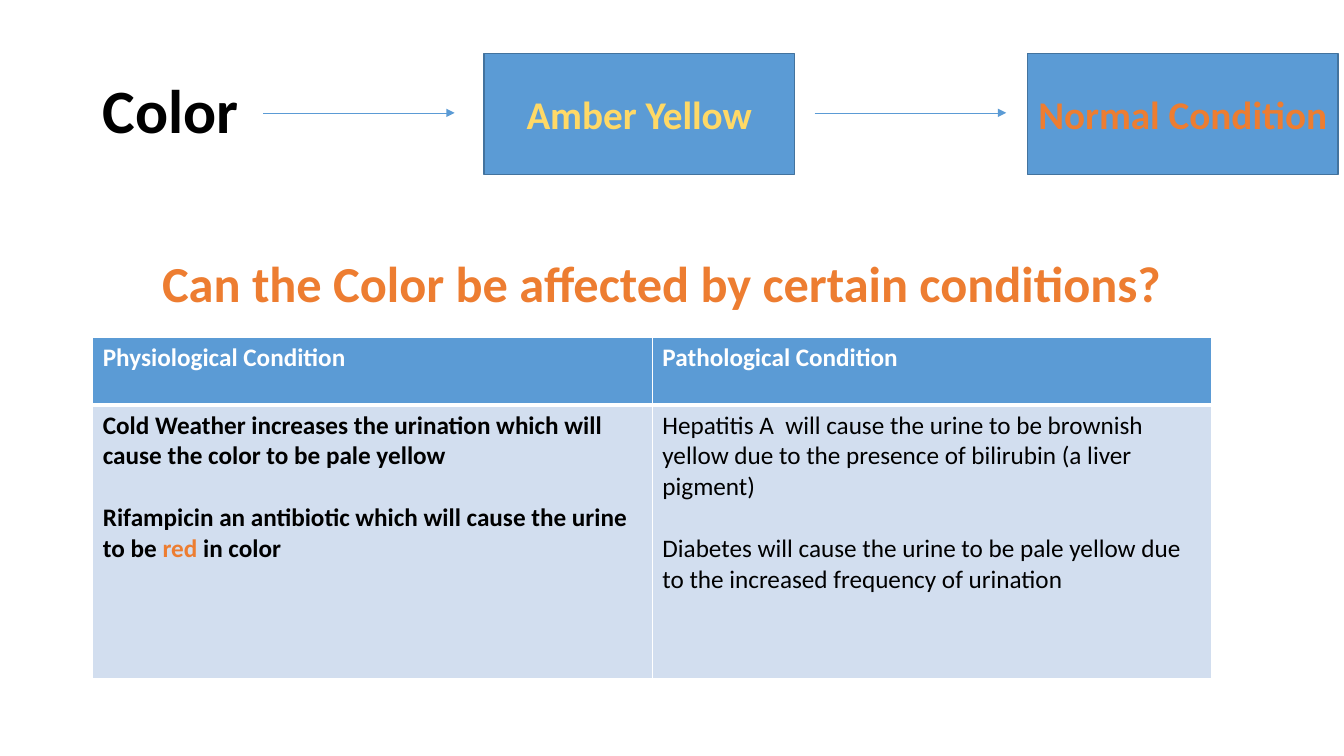
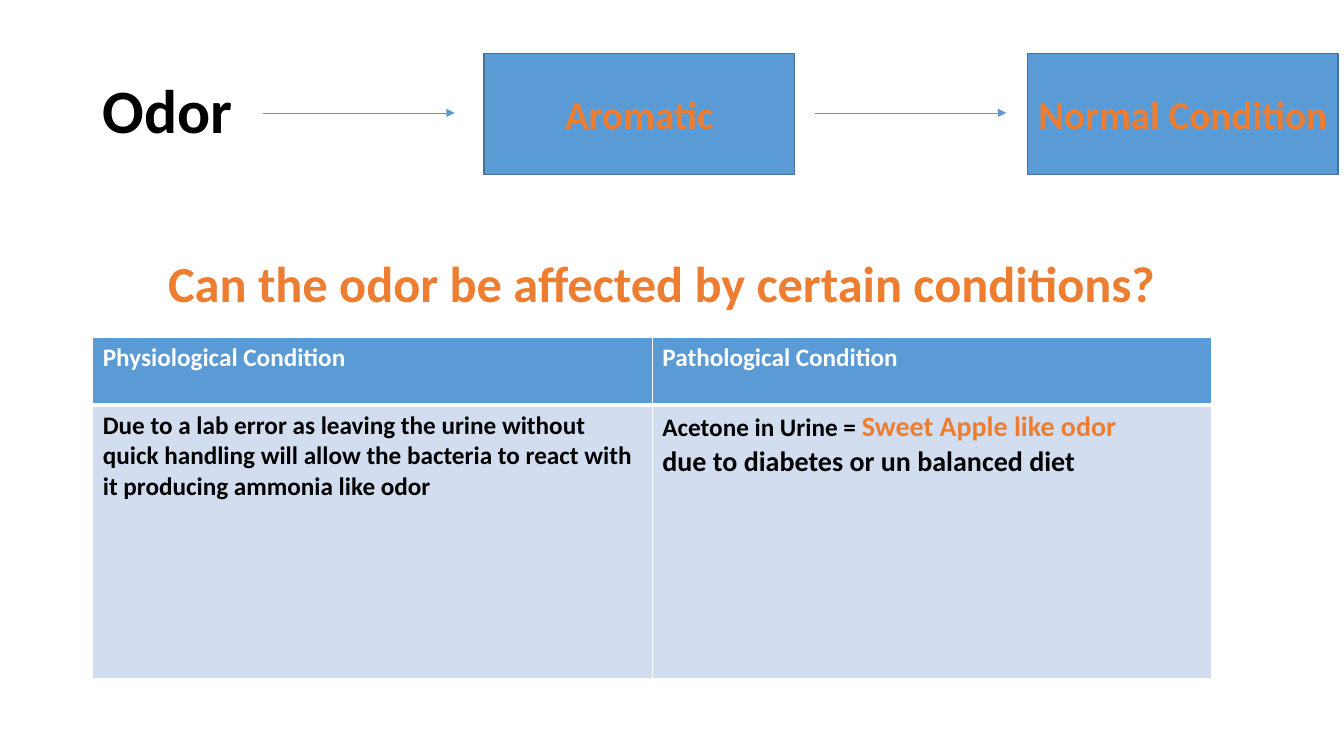
from dataclasses import dataclass

import pptx
import pptx.dml.color
import pptx.enum.shapes
import pptx.enum.text
import pptx.oxml
import pptx.oxml.ns
import pptx.util
from pptx.util import Inches

ANCHOR = pptx.enum.text.MSO_ANCHOR
ALIGN = pptx.enum.text.PP_ALIGN
NAMESPACE = pptx.oxml.ns.nsdecls("a")


@dataclass(frozen=True)
class Theme:
    font: str = "Calibri"
    black: str = "000000"
    white: str = "FFFFFF"
    blue: str = "5B9BD5"
    outline: str = "43739E"
    pale: str = "D2DEEF"
    orange: str = "ED7D31"
    yellow: str = "FFD966"
    title: int = 44
    question: int = 36
    label: int = 28
    large: int = 20
    body: int = 18
    body_line: int = 22


THEME = Theme()


@dataclass(frozen=True)
class Span:
    text: str
    color: str = THEME.black
    size: int = THEME.body
    bold: bool = True


def rgb(color):
    return pptx.dml.color.RGBColor.from_string(color)


class SlideBuilder:
    """Holds the deck, its style and the current page."""

    def __init__(self, theme):
        self.theme = theme
        self.deck = pptx.Presentation()
        self.deck.slide_width = Inches(13.33)
        self.deck.slide_height = Inches(7.5)
        self.page = None

    def new_page(self):
        self.page = self.deck.slides.add_slide(self.deck.slide_layouts[5])

    def format_run(self, run, span):
        run.font.name = self.theme.font
        run.font.size = pptx.util.Pt(span.size)
        run.font.bold = span.bold
        run.font.color.rgb = rgb(span.color)

    def set_spans(self, para, spans):
        para.text = spans[0].text
        for span in spans[1:]:
            para.add_run().text = span.text
        for run, span in zip(para.runs, spans):
            self.format_run(run, span)

    def title(self, text):
        box = self.page.shapes.title
        box.left, box.top = Inches(0.92), Inches(0.4)
        box.width, box.height = Inches(11.5), Inches(1.45)
        box.text_frame.auto_size = pptx.enum.text.MSO_AUTO_SIZE.NONE
        box.text_frame.vertical_anchor = ANCHOR.MIDDLE
        para = box.text_frame.paragraphs[0]
        para.alignment = ALIGN.LEFT
        para.line_spacing = 0.9
        self.set_spans(para, [Span(text, size=self.theme.title)])

    def box(self, left, top, width, height, span, fill, outline):
        shape = self.page.shapes.add_shape(
            pptx.enum.shapes.MSO_SHAPE.RECTANGLE,
            Inches(left), Inches(top), Inches(width), Inches(height))
        shape.shadow.inherit = False
        shape.fill.solid()
        shape.fill.fore_color.rgb = rgb(fill)
        shape.line.color.rgb = rgb(outline)
        shape.line.width = pptx.util.Pt(1)
        shape.text_frame.word_wrap = True
        shape.text_frame.vertical_anchor = ANCHOR.MIDDLE
        para = shape.text_frame.paragraphs[0]
        para.alignment = ALIGN.CENTER
        self.set_spans(para, [span])

    def step(self, left, text, color):
        span = Span(text, color, self.theme.label)
        self.box(left, 0.53, 3.08, 1.2, span, self.theme.blue, self.theme.outline)

    def question(self, text):
        span = Span(text, self.theme.orange, self.theme.question)
        self.box(0, 2.13, 13.13, 1.34, span, self.theme.white, self.theme.white)

    def arrow(self, left):
        level = Inches(1.12)
        connector = self.page.shapes.add_connector(
            pptx.enum.shapes.MSO_CONNECTOR.STRAIGHT,
            Inches(left), level, Inches(left + 1.9), level)
        connector.line.color.rgb = rgb(self.theme.blue)
        connector.line.width = pptx.util.Pt(0.5)
        properties = connector._element.spPr
        properties.find(pptx.oxml.ns.qn("a:ln")).append(
            pptx.oxml.parse_xml(f'<a:tailEnd {NAMESPACE} type="triangle"/>'))
        properties.append(pptx.oxml.parse_xml(f"<a:effectLst {NAMESPACE}/>"))

    def borders(self, cell, top, bottom):
        properties = cell._tc.get_or_add_tcPr()
        for side, points in (("L", 1), ("R", 1), ("T", top), ("B", bottom)):
            properties.append(pptx.oxml.parse_xml(
                f'<a:ln{side} {NAMESPACE} w="{int(pptx.util.Pt(points))}">'
                f'<a:solidFill><a:srgbClr val="{self.theme.white}"/></a:solidFill>'
                f"</a:ln{side}>"))

    def cell(self, cell, paragraphs, fill, top, bottom, gap=0):
        self.borders(cell, top, bottom)
        cell.fill.solid()
        cell.fill.fore_color.rgb = rgb(fill)
        frame = cell.text_frame
        for index, spans in enumerate(paragraphs):
            para = frame.add_paragraph() if index else frame.paragraphs[0]
            if index:
                para.space_before = pptx.util.Pt(gap)
            self.set_spans(para, spans)

    def conditions(self, physiological, pathological, gap):
        table = self.page.shapes.add_table(
            2, 2, Inches(0.92), Inches(3.35), Inches(11.1), Inches(3.38)).table
        table.rows[0].height = Inches(0.67)
        table.rows[1].height = Inches(2.71)
        columns = (("Physiological Condition", physiological),
                   ("Pathological Condition", pathological))
        for index, (heading, paragraphs) in enumerate(columns):
            table.columns[index].width = Inches(5.55)
            self.cell(table.cell(0, index), [[Span(heading, self.theme.white)]],
                      self.theme.blue, top=1, bottom=3)
            self.cell(table.cell(1, index), paragraphs,
                      self.theme.pale, top=3, bottom=1, gap=gap)

    def property_page(self, name, normal, normal_color, question,
                      physiological, pathological, gap=0):
        self.new_page()
        # Title and the chain to the normal condition
        self.title(name)
        self.step(4.8, normal, normal_color)
        self.arrow(2.61)
        self.question(question)
        self.arrow(8.08)
        self.step(10.19, "Normal Condition", self.theme.orange)
        # Conditions that change the property
        self.conditions(physiological, pathological, gap)


def main():
    builder = SlideBuilder(THEME)

    # Color
    builder.property_page(
        "Color", "Amber Yellow", THEME.yellow,
        "Can the Color be affected by certain conditions?",
        physiological=[
            [Span("Cold Weather increases the urination which will cause "
                  "the color to be pale yellow")],
            [Span("Rifampicin an antibiotic which will cause the urine to be "),
             Span("red ", THEME.orange),
             Span("in color")],
        ],
        pathological=[
            [Span("Hepatitis A  will cause the urine to be brownish yellow due to "
                  "the presence of bilirubin (a liver pigment)", bold=False)],
            [Span("Diabetes will cause the urine to be pale yellow due to the "
                  "increased frequency of urination", bold=False)],
        ],
        gap=THEME.body_line)

    # Odor
    builder.property_page(
        "Odor", "Aromatic", THEME.orange,
        "Can the odor be affected by certain conditions?",
        physiological=[
            [Span("Due to a lab error as leaving the urine without quick handling will "
                  "allow the bacteria to react with it producing ammonia like odor")],
        ],
        pathological=[
            [Span("Acetone in Urine = "),
             Span("Sweet Apple like odor", THEME.orange, THEME.large)],
            [Span("due to diabetes or un balanced diet", size=THEME.large)],
        ])

    builder.deck.save("out.pptx")


if __name__ == "__main__":
    main()
